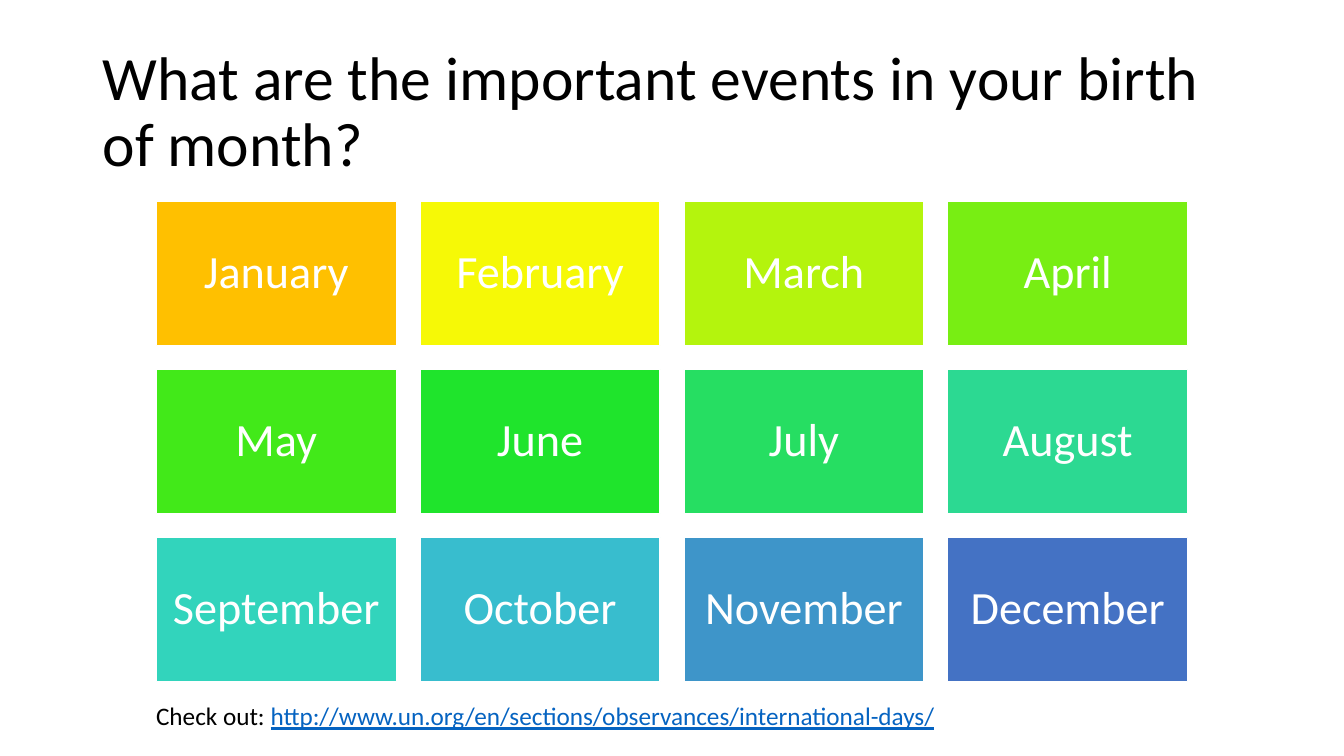
from pptx import Presentation
from pptx.dml.color import RGBColor
from pptx.enum.shapes import MSO_SHAPE
from pptx.enum.text import MSO_ANCHOR, PP_ALIGN
from pptx.util import Pt

PX = 9144  # EMU per px, 100 px to the inch
COLORS = {"black": "000000", "white": "FFFFFF", "link": "0563C1"}
MONTHS = {
    "January": "FFC000", "February": "F6F906", "March": "B4F40D",
    "April": "78EE13", "May": "42E919", "June": "1FE42C",
    "July": "26DE62", "August": "2CD992", "September": "32D4BC",
    "October": "38BDCE", "November": "3E95C9", "December": "4472C4",
}


def scale(*sizes):
    return [round(size * PX) for size in sizes]


def write(shape, *runs, size=18, color="black", align=PP_ALIGN.LEFT,
          anchor=MSO_ANCHOR.TOP, space=1.0, pad=(10, 5)):
    """Each run is a text, or a pair of text and link colour."""
    frame = shape.text_frame
    frame.word_wrap = True
    frame.vertical_anchor = anchor
    frame.margin_left = frame.margin_right = pad[0] * PX
    frame.margin_top = frame.margin_bottom = pad[1] * PX
    para = frame.paragraphs[0]
    para.alignment = align
    para.line_spacing = space
    for item in runs:
        text, tint = (item, None) if isinstance(item, str) else item
        run = para.add_run()
        run.text = text
        run.font.name = "Calibri"
        run.font.size = Pt(size)
        run.font.underline = bool(tint)
        run.font.color.rgb = RGBColor.from_string(COLORS[tint or color])


def title(slide, box):
    write(slide.shapes.add_textbox(*scale(*box)),
          "What are the important events in your birth of month?",
          size=44, anchor=MSO_ANCHOR.MIDDLE, space=0.9)


def grid(slide, box, cols=4, rows=3, wide=238, high=143):
    left, top, width, height = box
    # Steps that spread the tiles evenly over the box
    across = (width - wide) / (cols - 1)
    down = (height - high) / (rows - 1)
    for index, (month, fill) in enumerate(MONTHS.items()):
        row, col = divmod(index, cols)
        tile = slide.shapes.add_shape(
            MSO_SHAPE.RECTANGLE,
            *scale(left + col * across, top + row * down, wide, high))
        tile.shadow.inherit = False
        tile.fill.solid()
        tile.fill.fore_color.rgb = RGBColor.from_string(fill)
        tile.line.color.rgb = RGBColor.from_string(COLORS["white"])
        tile.line.width = Pt(1)
        write(tile, month, size=33, color="white", align=PP_ALIGN.CENTER,
              anchor=MSO_ANCHOR.MIDDLE, space=0.9, pad=(14, 14))


def source(slide, box):
    address = "http://www.un.org/en/sections/observances/international-days/"
    write(slide.shapes.add_textbox(*scale(*box)),
          "Check out: ", (address, "link"))


def main():
    deck = Presentation()
    deck.slide_width, deck.slide_height = scale(1333, 750)
    slide = deck.slides.add_slide(deck.slide_layouts[6])
    # Heading, month tiles, web address
    title(slide, (92, 40, 1150, 145))
    grid(slide, (155, 200, 1023, 476))
    source(slide, (145, 690, 1036, 40))
    deck.save("out.pptx")


if __name__ == "__main__":
    main()
